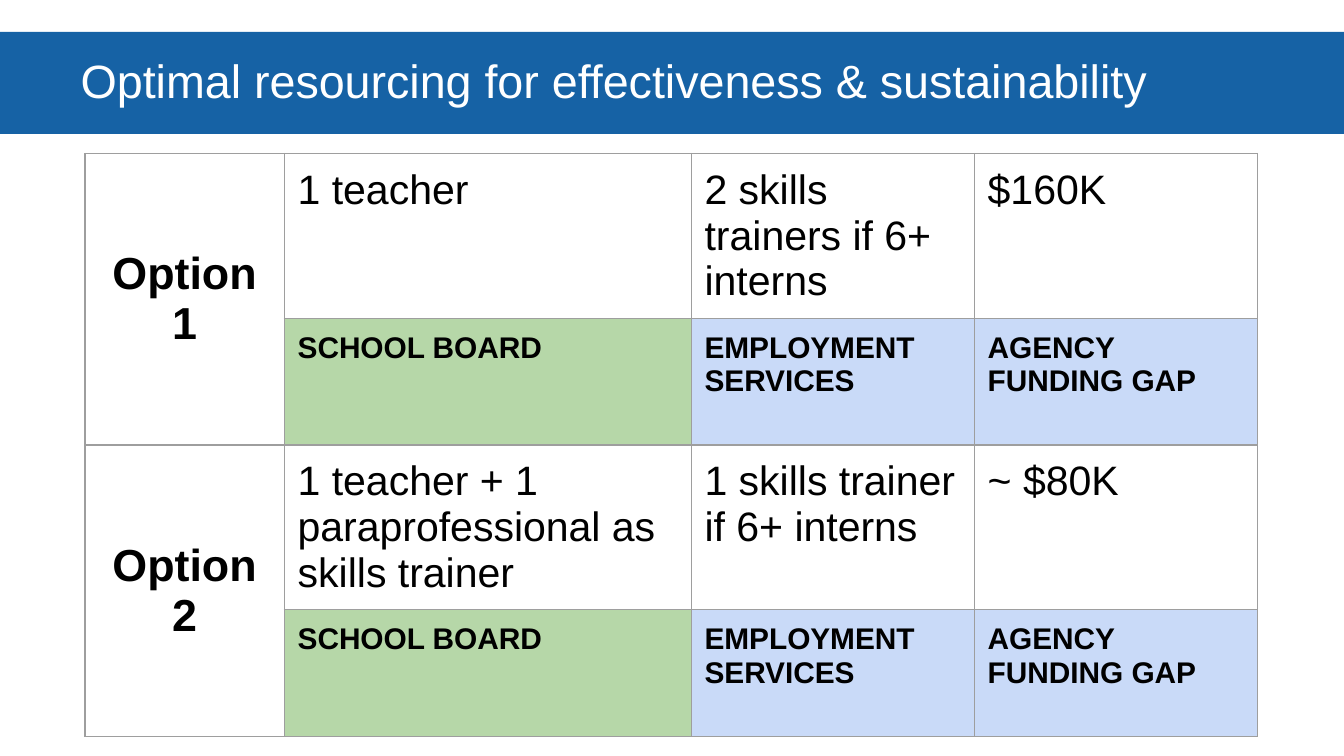
"""Build the slide comparing two resourcing options."""
import pptx
import pptx.dml.color
import pptx.enum.text
import pptx.oxml
import pptx.oxml.ns
import pptx.util
from dataclasses import dataclass

Pt = pptx.util.Pt
ALIGN = pptx.enum.text.PP_ALIGN
ANCHOR = pptx.enum.text.MSO_ANCHOR


@dataclass(frozen=True)
class Theme:
    font: str = "Arial"
    white: str = "FFFFFF"
    black: str = "000000"
    banner: str = "1662A5"
    grid: str = "9E9E9E"
    green: str = "B6D7A8"
    blue: str = "C9DAF8"
    title_size: int = 25
    option_size: int = 24
    detail_size: int = 22
    funder_size: int = 16


class SlideBuilder:
    def __init__(self, page, theme):
        self.page = page
        self.theme = theme

    def style(self, para, size, color, bold=False):
        font = para.font
        font.name = self.theme.font
        font.size = Pt(size)
        font.bold = bold
        font.color.rgb = pptx.dml.color.RGBColor.from_string(color)

    def paint(self, fill, color):
        fill.solid()
        fill.fore_color.rgb = pptx.dml.color.RGBColor.from_string(color)

    def title(self, text, left, top, width, height):
        box = self.page.shapes.title
        box.left, box.top, box.width, box.height = map(Pt, (left, top, width, height))
        self.paint(box.fill, self.theme.banner)
        frame = box.text_frame
        frame.text = text
        frame.word_wrap = True
        frame.auto_size = pptx.enum.text.MSO_AUTO_SIZE.NONE
        frame.vertical_anchor = ANCHOR.MIDDLE
        para = frame.paragraphs[0]
        para.alignment = ALIGN.LEFT
        para.line_spacing = 0.9
        self.style(para, self.theme.title_size, self.theme.white)
        properties = para._p.get_or_add_pPr()
        properties.set("marL", str(Pt(36)))
        properties.set("indent", "0")

    def borders(self, cell):
        properties = cell._tc.get_or_add_tcPr()
        for index, side in enumerate(("lnL", "lnR", "lnT", "lnB")):
            properties.insert(index, pptx.oxml.parse_xml(
                f'<a:{side} {pptx.oxml.ns.nsdecls("a")} w="{Pt(0.75)}"><a:solidFill>'
                f'<a:srgbClr val="{self.theme.grid}"/></a:solidFill></a:{side}>'))

    def cell(self, cell, text, size, bold=False, fill=None):
        cell.text = text
        cell.margin_left = cell.margin_right = Pt(7.2)
        cell.margin_top = cell.margin_bottom = Pt(7.2)
        self.style(cell.text_frame.paragraphs[0], size, self.theme.black, bold)
        if fill:
            self.paint(cell.fill, fill)
        else:
            cell.fill.background()

    def option_table(self, left, top, widths, heights, option, details, funders):
        theme = self.theme
        table = self.page.shapes.add_table(
            len(heights), len(widths), Pt(left), Pt(top),
            Pt(sum(widths)), Pt(sum(heights))).table
        table.first_row = table.horz_banding = False
        for column, width in zip(table.columns, widths):
            column.width = Pt(width)
        for row, height in zip(table.rows, heights):
            row.height = Pt(height)

        heading = table.cell(0, 0)
        heading.merge(table.cell(1, 0))
        self.cell(heading, option, theme.option_size, bold=True)
        heading.vertical_anchor = ANCHOR.MIDDLE
        heading.text_frame.paragraphs[0].alignment = ALIGN.CENTER

        for column, (detail, (funder, fill)) in enumerate(zip(details, funders), 1):
            self.cell(table.cell(0, column), detail, theme.detail_size)
            self.cell(table.cell(1, column), funder, theme.funder_size, True, fill)
        for cell in table.iter_cells():
            self.borders(cell)


def main():
    deck = pptx.Presentation()
    deck.slide_width, deck.slide_height = Pt(720), Pt(405)
    theme = Theme()
    builder = SlideBuilder(deck.slides.add_slide(deck.slide_layouts[5]), theme)
    builder.title("Optimal resourcing for effectiveness & sustainability", 0, 17.1, 720, 54.7)

    funders = (
        ("SCHOOL BOARD", theme.green),
        ("EMPLOYMENT SERVICES", theme.blue),
        ("AGENCY FUNDING GAP", theme.blue),
    )
    options = (
        ("Option 1", ("1 teacher", "2 skills trainers if 6+ interns", "$160K")),
        ("Option 2", ("1 teacher + 1 paraprofessional as skills trainer",
                      "1 skills trainer if 6+ interns", "~ $80K")),
    )
    widths, heights = (106.8, 218, 151.7, 151.7), (88.3, 67.8)
    for index, (option, details) in enumerate(options):
        top = 82.2 + index * sum(heights)
        builder.option_table(45.5, top, widths, heights, option, details, funders)
    deck.save("out.pptx")


if __name__ == "__main__":
    main()
